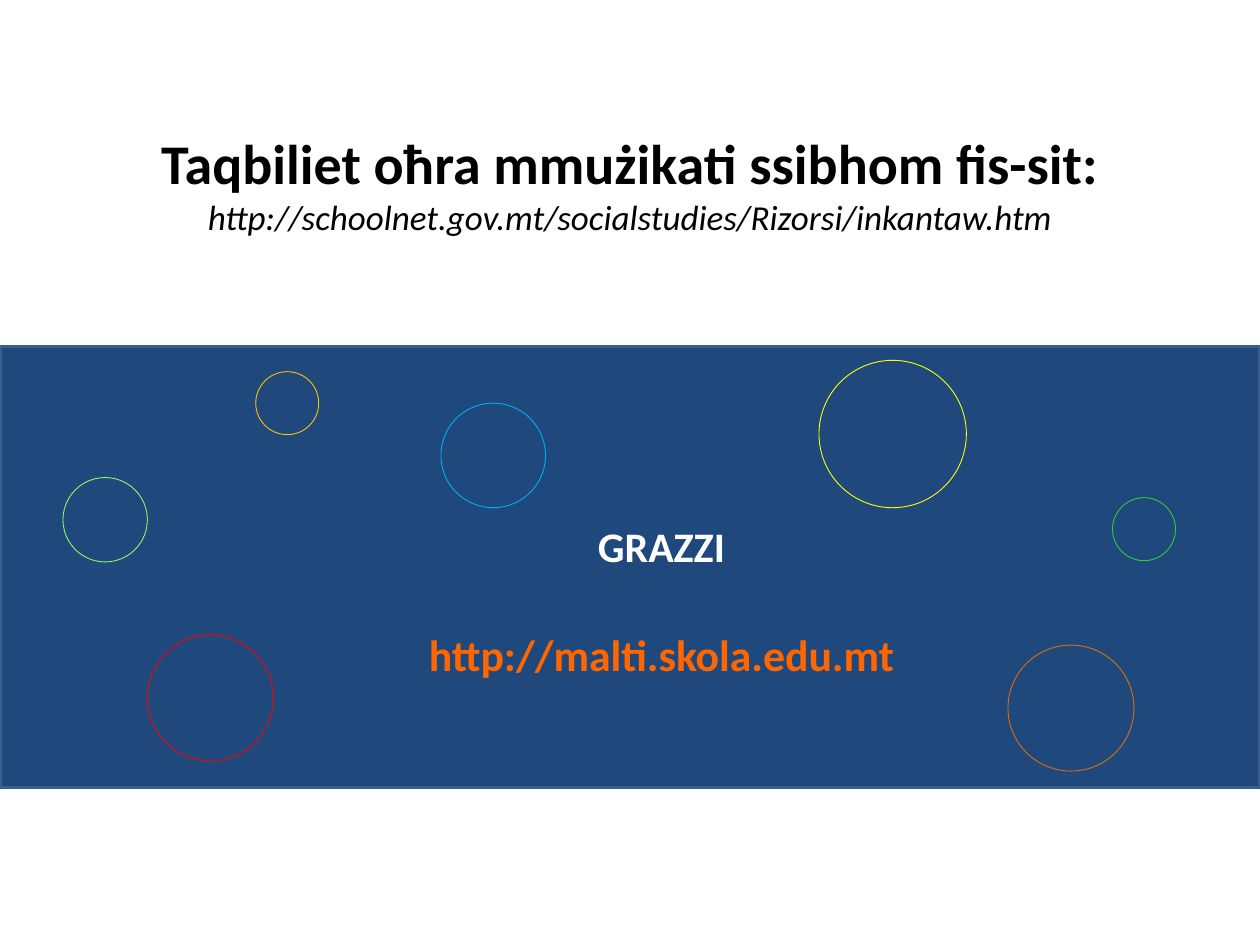
from pptx import Presentation
from pptx.dml.color import RGBColor
from pptx.enum.shapes import MSO_SHAPE
from pptx.enum.text import MSO_ANCHOR, MSO_AUTO_SIZE, PP_ALIGN
from pptx.oxml.ns import qn
from pptx.util import Inches, Pt

BLACK = RGBColor(0x00, 0x00, 0x00)
WHITE = RGBColor(0xFF, 0xFF, 0xFF)
NAVY = RGBColor(0x1F, 0x49, 0x7D)
EDGE = RGBColor(0x3A, 0x5F, 0x8C)
ORANGE = RGBColor(0xFF, 0x66, 0x00)
RED = RGBColor(0xFF, 0x00, 0x00)
RUST = RGBColor(0xE4, 0x6C, 0x0A)
SKY = RGBColor(0x00, 0xB0, 0xF0)
YELLOW = RGBColor(0xFF, 0xFF, 0x00)
LIME = RGBColor(0x8C, 0xFA, 0x60)
GREEN = RGBColor(0x33, 0xCC, 0x33)
GOLD = RGBColor(0xFF, 0xC0, 0x00)

HEADING = "Taqbiliet oħra mmużikati ssibhom fis-sit:"
SONGS_URL = "http://schoolnet.gov.mt/socialstudies/Rizorsi/inkantaw.htm"
CLOSING = [("GRAZZI", 24, WHITE, 0), ("http://malti.skola.edu.mt", 25, ORANGE, 32.5)]
BUBBLES = [
    (1.17, 5.04, 1, RED),
    (8, 5.12, 1, RUST),
    (3.5, 3.2, 0.83, SKY),
    (6.5, 2.86, 1.17, YELLOW),
    (0.5, 3.79, 0.67, LIME),
    (8.83, 3.95, 0.5, GREEN),
    (2.03, 2.95, 0.5, GOLD),
]


def place(sp, left, top, width, height):
    sp.left, sp.top = Inches(left), Inches(top)
    sp.width, sp.height = Inches(width), Inches(height)


def add_outlined(shapes, kind, box, color, weight):
    sp = shapes.add_shape(kind, *map(Inches, box))
    sp.shadow.inherit = False
    sp.fill.background()
    sp.line.color.rgb = color
    sp.line.width = Pt(weight)
    return sp


def style(font, size, color, bold=True, italic=False):
    font.name = "Calibri"
    font.size = Pt(size)
    font.color.rgb = color
    font.bold = bold
    font.italic = italic


prs = Presentation()
prs.slide_width, prs.slide_height = Inches(10), Inches(7.5)
s = prs.slides.add_slide(prs.slide_layouts[1])
title, body = s.shapes.title, s.placeholders[1]

banner = s.shapes.add_group_shape()
band = add_outlined(banner.shapes, MSO_SHAPE.RECTANGLE, (0, 2.75, 10, 3.5), EDGE, 2)
band.fill.solid()
band.fill.fore_color.rgb = NAVY
for left, top, size, color in BUBBLES:
    add_outlined(banner.shapes, MSO_SHAPE.OVAL, (left, top, size, size), color, 0.5)
title.element.addprevious(banner.element)

place(title, 0.5, 0.83, 9, 1.25)
tf = title.text_frame
tf.text = f"{HEADING}\v{SONGS_URL}"
tf.auto_size = MSO_AUTO_SIZE.NONE
tf.vertical_anchor = MSO_ANCHOR.MIDDLE
p = tf.paragraphs[0]
p.alignment = PP_ALIGN.CENTER
heading, link = p.runs
style(heading.font, 32, BLACK)
style(link.font, 20, BLACK, bold=False, italic=True)

place(body, 0.75, 4.08, 9, 1.5)
tf = body.text_frame
tf.text = "\n".join(text for text, *_ in CLOSING)
tf.auto_size = MSO_AUTO_SIZE.NONE
tf.vertical_anchor = MSO_ANCHOR.TOP
for p, (_, size, color, gap) in zip(tf.paragraphs, CLOSING):
    p.alignment = PP_ALIGN.CENTER
    p.space_before = Pt(gap)
    pPr = p._p.get_or_add_pPr()
    pPr.set("marL", str(Inches(0.38)))
    pPr.set("indent", str(-Inches(0.38)))
    pPr.append(pPr.makeelement(qn("a:buNone"), {}))
    style(p.runs[0].font, size, color)

prs.save("out.pptx")
